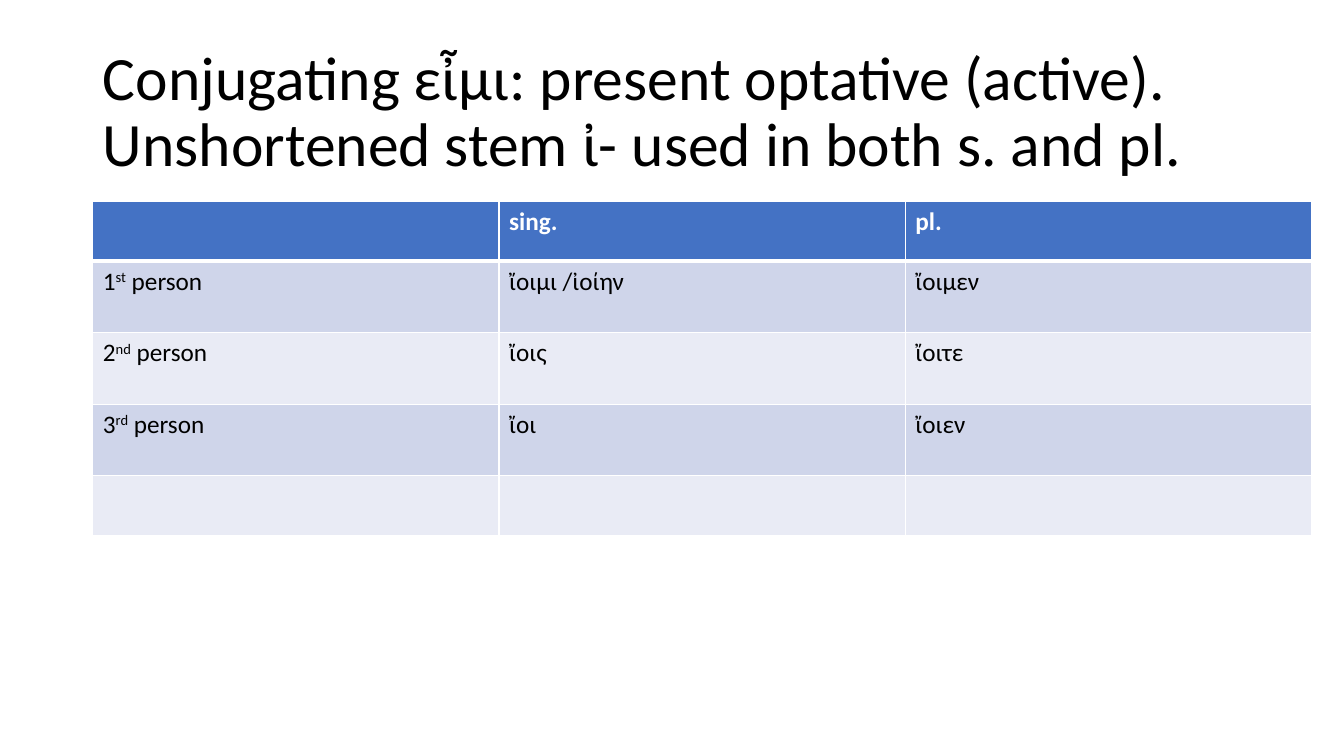
from lxml.etree import SubElement
from pptx import Presentation
from pptx.dml.color import RGBColor
from pptx.enum.text import MSO_ANCHOR as Anchor, MSO_AUTO_SIZE as AutoSize, PP_ALIGN as Align
from pptx.oxml.ns import qn
from pptx.util import Inches, Pt

BLACK = RGBColor(0x00, 0x00, 0x00)
WHITE = RGBColor(0xFF, 0xFF, 0xFF)
HEADER_BLUE = RGBColor(0x44, 0x72, 0xC4)
BAND_DARK = RGBColor(0xCF, 0xD5, 0xEA)
BAND_LIGHT = RGBColor(0xE9, 0xEB, 0xF5)

TITLE = ("Conjugating εἶμι: present optative (active). "
         "Unshortened stem ἰ- used in both s. and pl.")
# A tuple holds a number, its raised ending and the rest of the label
FORMS = [
    ["", "sing.", "pl."],
    [("1", "st", " person"), "ἴοιμι /ἰοίην", "ἴοιμεν"],
    [("2", "nd", " person"), "ἴοις", "ἴοιτε"],
    [("3", "rd", " person"), "ἴοι", "ἴοιεν"],
    ["", "", ""],
]
ROW_HEIGHTS = [0.59, 0.71, 0.71, 0.71, 0.59]
LEFT = 0.92


class SlideWriter:
    """Holds the text style and the current slide."""

    font_name = "Calibri"
    title_size = 44
    body_size = 18

    def __init__(self, deck):
        self.slide = deck.slides.add_slide(deck.slide_layouts[5])

    def style(self, font, size, color, bold=False):
        font.name, font.size, font.bold = self.font_name, Pt(size), bold
        font.color.rgb = color

    def title(self, text, left, top, width, height):
        box = self.slide.shapes.title
        box.left, box.top = Inches(left), Inches(top)
        box.width, box.height = Inches(width), Inches(height)
        frame = box.text_frame
        frame.text = text
        frame.word_wrap = True
        frame.auto_size = AutoSize.NONE
        frame.vertical_anchor = Anchor.MIDDLE
        para = frame.paragraphs[0]
        para.alignment, para.line_spacing = Align.LEFT, 0.9
        self.style(para.runs[0].font, self.title_size, BLACK)

    def table(self, rows, heights, left, top, width):
        frame = self.slide.shapes.add_table(
            len(rows), len(rows[0]), Inches(left), Inches(top),
            Inches(width), Inches(sum(heights)))
        table = frame.table
        for row, height in zip(table.rows, heights):
            row.height = Inches(height)
        for r, row in enumerate(rows):
            for c, content in enumerate(row):
                self.cell(table.cell(r, c), content, r)

    def cell(self, cell, content, row):
        is_header = row == 0
        # The rule under the header is heavier than the others
        self.borders(cell, top=3 if row == 1 else 1, bottom=3 if is_header else 1)
        cell.fill.solid()
        cell.fill.fore_color.rgb = (
            HEADER_BLUE if is_header else BAND_DARK if row % 2 else BAND_LIGHT)
        para = cell.text_frame.paragraphs[0]
        color = WHITE if is_header else BLACK
        self.style(para.font, self.body_size, color, is_header)
        pieces = content if isinstance(content, tuple) else (content,)
        for index, piece in enumerate(pieces):
            if piece:
                span = para.add_run()
                span.text = piece
                self.style(span.font, self.body_size, color, is_header)
                if index == 1:
                    span._r.get_or_add_rPr().set("baseline", "30000")

    def borders(self, cell, top, bottom):
        properties = cell._tc.get_or_add_tcPr()
        for side, width in zip("LRTB", (1, 1, top, bottom)):
            line = SubElement(properties, qn(f"a:ln{side}"), w=str(Pt(width)))
            fill = SubElement(line, qn("a:solidFill"))
            SubElement(fill, qn("a:srgbClr"), val=str(WHITE))


def main():
    deck = Presentation()
    deck.slide_width, deck.slide_height = Inches(13.33), Inches(7.5)
    writer = SlideWriter(deck)
    # Heading
    writer.title(TITLE, LEFT, 0.4, 11.5, 1.45)
    # Verb forms by person and number
    writer.table(FORMS, ROW_HEIGHTS, LEFT, 2, 12.09)
    deck.save("out.pptx")


if __name__ == "__main__":
    main()
